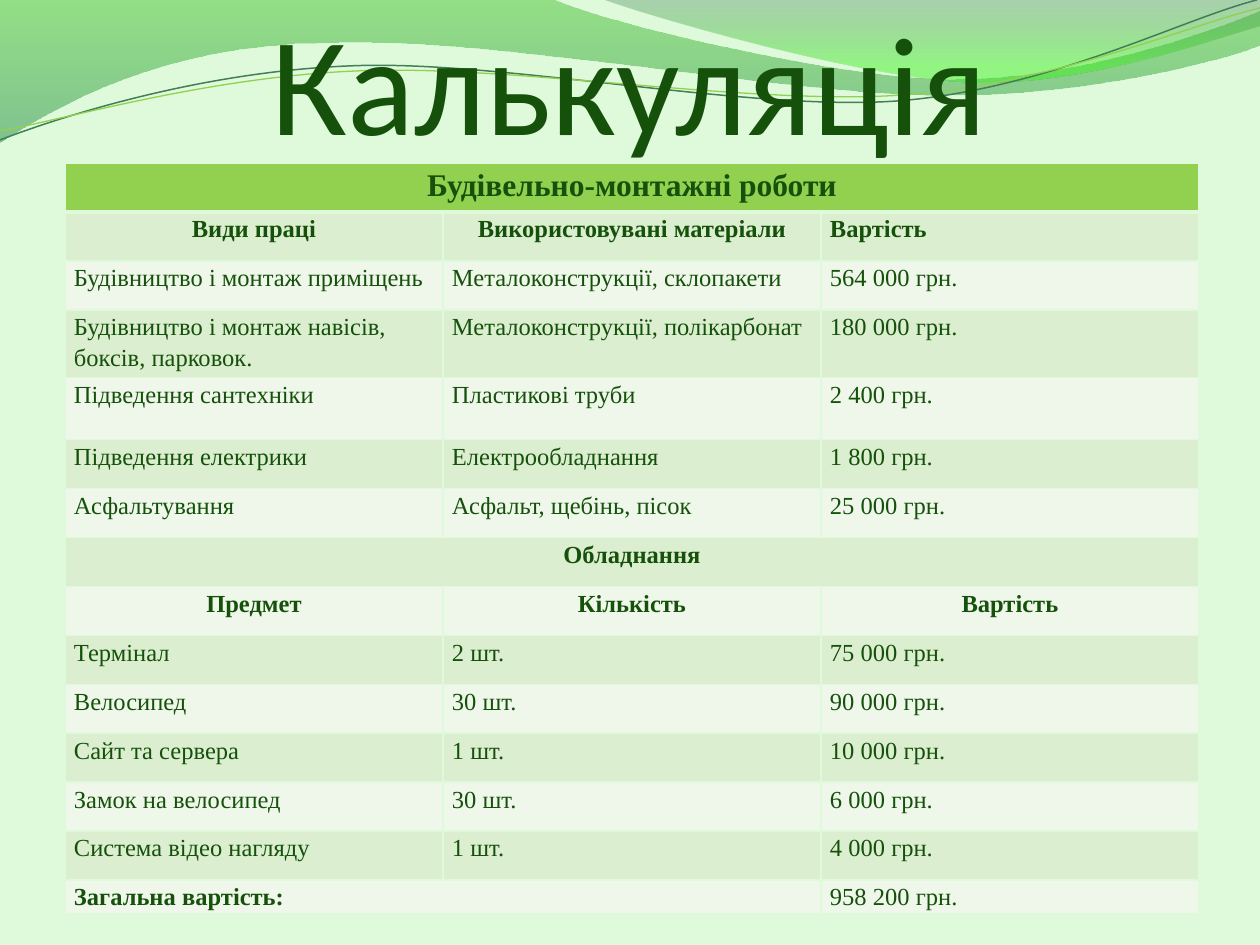
from lxml.etree import SubElement
from pptx import Presentation
from pptx.dml.color import RGBColor
from pptx.enum.text import MSO_ANCHOR, PP_ALIGN
from pptx.oxml.ns import qn
from pptx.util import Pt

SCALE = 914400 / 126
DARK, PALE, LIME = "15510B", "DEFADA", "92D050"
BANDS = ("EEF7E9", "DCEED0")
ROW_HEIGHTS = [49] * 3 + [64, 62] + [49] * 9 + [30]
HEADERS = (0, 1, 7, 8)
CENTERED = {(0, 0), (1, 0), (1, 1), (7, 0), (8, 0), (8, 1), (8, 2)}
SPANS = {0: 2, 7: 2, 14: 1}
ROWS = [
    ("Будівельно-монтажні роботи", "", ""),
    ("Види праці", "Використовувані матеріали", "Вартість"),
    ("Будівництво і монтаж приміщень", "Металоконструкції, склопакети", "564 000 грн."),
    ("Будівництво і монтаж навісів, боксів, парковок.",
     "Металоконструкції, полікарбонат", "180 000 грн."),
    ("Підведення сантехніки", "Пластикові труби", "2 400 грн."),
    ("Підведення електрики", "Електрообладнання", "1 800 грн."),
    ("Асфальтування", "Асфальт, щебінь, пісок", "25 000 грн."),
    ("Обладнання", "", ""),
    ("Предмет", "Кількість", "Вартість"),
    ("Термінал", "2 шт.", "75 000 грн."),
    ("Велосипед", "30 шт.", "90 000 грн."),
    ("Сайт та сервера", "1 шт.", "10 000 грн."),
    ("Замок на велосипед", "30 шт.", "6 000 грн."),
    ("Система відео нагляду", "1 шт.", "4 000 грн."),
    ("Загальна вартість:", "", "958 200 грн."),
]
BROAD_WAVE = [
    [(0, 0)], [(554, 0)],
    [(600, 21), (837, 79), (955, 79)], [(1075, 79), (1207, 33), (1260, 11)],
    [(1260, 45)],
    [(1239, 55), (1096, 96), (940, 95)], [(784, 95), (481, 35), (324, 43)],
    [(163, 45), (58, 105), (0, 142)],
]
RIGHT_WAVE = [
    [(604, 0)], [(641, 14), (859, 78), (969, 82)],
    [(1079, 87), (1211, 40), (1260, 26)], [(1260, 0)],
]
GREEN_LINE = [
    [(0, 140)], [(60, 117), (199, 72), (349, 66)],
    [(498, 59), (747, 112), (898, 101)], [(1050, 89), (1182, 19), (1257, 0)],
]
LIME_LINE = [
    [(0, 131)], [(59, 121), (207, 77), (357, 71)],
    [(508, 64), (752, 106), (903, 95)], [(1053, 84), (1186, 26), (1260, 8)],
]


def px(n):
    """Turn pixels into EMU."""
    return round(n * SCALE)


def rgb(color):
    """Turn a hex string into a colour."""
    return RGBColor.from_string(color)


def add_curve(s, box, segments, close):
    """Draw one outline of straight and cubic segments relative to the box."""
    outline = [[(px(box[0] + x), px(box[1] + y)) for x, y in seg] for seg in segments]
    builder = s.shapes.build_freeform(*outline[0][0])
    builder.add_line_segments([seg[-1] for seg in outline[1:]], close=close)
    sp = builder.convert_to_shape()
    sp.shadow.inherit = False
    for node, seg in zip(list(sp._element.iter(qn("a:lnTo"))), outline[1:]):
        if len(seg) == 3:
            curve = SubElement(node.getparent(), qn("a:cubicBezTo"))
            for x, y in seg:
                SubElement(curve, qn("a:pt"), x=str(x - sp.left), y=str(y - sp.top))
            node.getparent().replace(node, curve)
    return sp


def add_waves(s, box):
    """Draw the translucent waves and the thin lines over them."""
    for segments, stops in (
        (BROAD_WAVE, ((0, "39BD22", 45), (1, "339353", 55))),
        (RIGHT_WAVE, ((0, "307146", 30), (0.8, "39F11A", 45))),
    ):
        sp = add_curve(s, box, segments, True)
        sp.line.fill.background()
        sp.fill.gradient()
        sp.fill.gradient_angle = 270
        for stop, (position, color, _) in zip(sp.fill.gradient_stops, stops):
            stop.position = position
            stop.color.rgb = rgb(color)
        colors = sp._element.spPr.iter(qn("a:srgbClr"))
        for node, (_, _, alpha) in zip(colors, stops):
            SubElement(node, qn("a:alpha"), val=str(alpha * 1000))
    for segments, color, width in ((GREEN_LINE, "427E56", 0.85), (LIME_LINE, LIME, 0.75)):
        sp = add_curve(s, box, segments, False)
        sp.fill.background()
        sp.line.color.rgb = rgb(color)
        sp.line.width = Pt(width)


def set_font(p, name, size, bold=False):
    """Set the paragraph font in the dark green."""
    f = p.font
    f.name, f.size, f.bold = name, Pt(size), bold
    f.color.rgb = rgb(DARK)


def add_title(s, box):
    """Place the heading at the bottom of the box."""
    tf = s.shapes.add_textbox(*map(px, box)).text_frame
    tf.word_wrap = True
    tf.vertical_anchor = MSO_ANCHOR.BOTTOM
    tf.margin_left = tf.margin_right = tf.margin_bottom = 0
    tf.margin_top = px(6)
    p = tf.paragraphs[0]
    p.text = "Калькуляція"
    p.alignment = PP_ALIGN.CENTER
    set_font(p, "Calibri", 80)


def set_borders(cell, header, below_header):
    """Give the cell pale borders, heavier under the header."""
    tcPr = cell._tc.get_or_add_tcPr()
    heavy = {"a:lnB": header, "a:lnT": below_header}
    for tag in ("a:lnL", "a:lnR", "a:lnT", "a:lnB"):
        width = Pt(3 if heavy.get(tag) else 1)
        fill = SubElement(SubElement(tcPr, qn(tag), w=str(width)), qn("a:solidFill"))
        SubElement(fill, qn("a:srgbClr"), val=PALE)


def fill_cell(cell, i, j, text):
    """Style one table cell and write its text."""
    set_borders(cell, i == 0, i == 1)
    cell.fill.solid()
    cell.fill.fore_color.rgb = rgb(BANDS[i % 2] if i else LIME)
    cell.margin_left = cell.margin_right = px(9)
    cell.margin_top = cell.margin_bottom = 0
    p = cell.text_frame.paragraphs[0]
    p.text = text
    p.line_spacing = 1.15
    p.alignment = PP_ALIGN.CENTER if (i, j) in CENTERED else PP_ALIGN.LEFT
    bold = i in HEADERS or (i, j) == (len(ROWS) - 1, 0)
    set_font(p, "Times New Roman", 14 if i else 18, bold)


def add_costs(s, box):
    """Build the cost table in the box."""
    table = s.shapes.add_table(len(ROWS), 3, *map(px, box)).table
    table.first_row = table.horz_banding = False
    for col in table.columns:
        col.width = px(box[2] / 3)
    for i, (row, height) in enumerate(zip(ROWS, ROW_HEIGHTS)):
        table.rows[i].height = px(height)
        for j, text in enumerate(row):
            if text:
                fill_cell(table.cell(i, j), i, j, text)
            else:
                fill_cell(table.cell(i, j), i, j, "")
    for i, last in SPANS.items():
        table.cell(i, 0).merge(table.cell(i, last))


def main():
    """Build the slide and save it."""
    prs = Presentation()
    prs.slide_width, prs.slide_height = px(1260), px(945)
    s = prs.slides.add_slide(prs.slide_layouts[6])
    s.background.fill.solid()
    s.background.fill.fore_color.rgb = rgb(PALE)
    add_waves(s, (0, 0, 1260, 142))
    add_title(s, (63, 6, 1134, 157))
    add_costs(s, (65, 163, 1134, sum(ROW_HEIGHTS)))
    prs.save("out.pptx")


if __name__ == "__main__":
    main()
